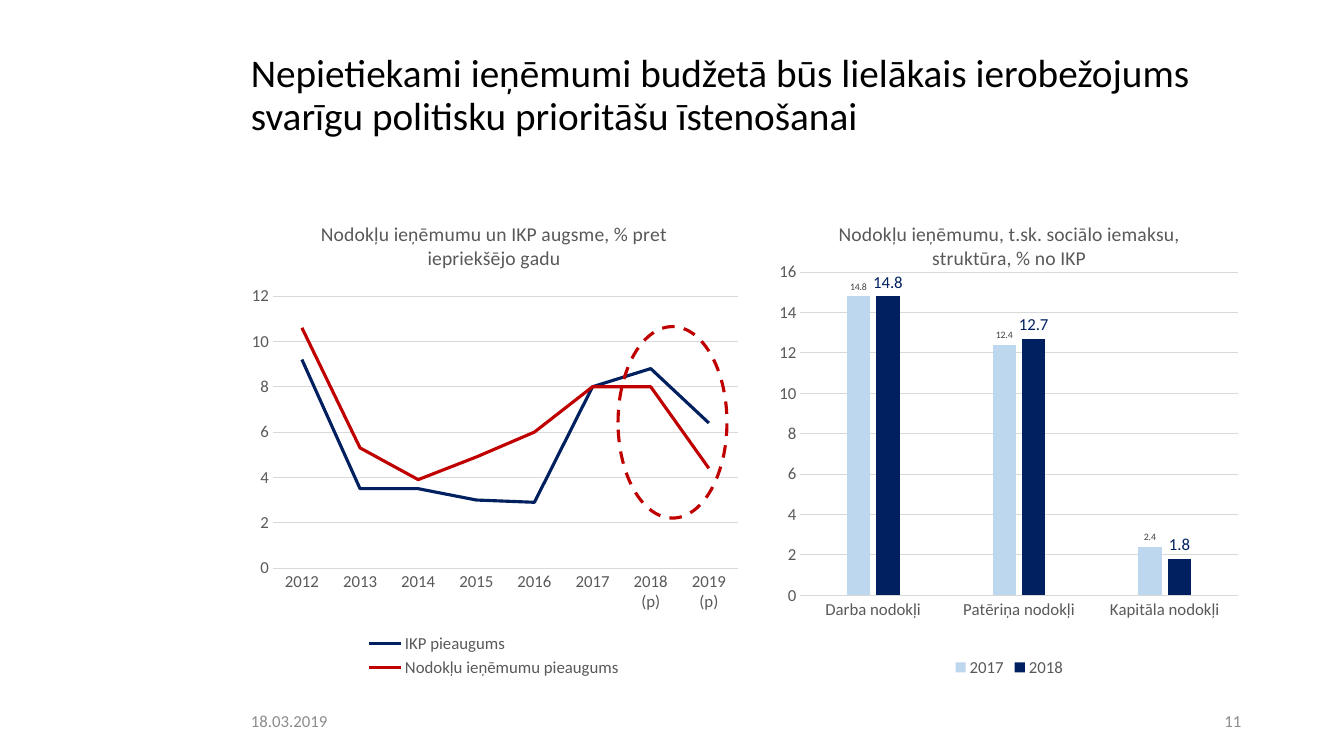
import pptx
import pptx.chart.data
import pptx.dml.color
import pptx.enum.chart
import pptx.enum.dml
import pptx.enum.shapes
import pptx.enum.text
import pptx.oxml
import pptx.util
from pptx.util import Inches

HEX = {"black": "000000", "grey": "595959", "pale": "8C8C8C", "grid": "D9D9D9",
       "sky": "BDD7EE", "navy": "002060", "red": "C00000", "dark": "404040"}
RGB = {name: pptx.dml.color.RGBColor.from_string(code) for name, code in HEX.items()}
KIND = pptx.enum.chart.XL_CHART_TYPE
ALIGN = pptx.enum.text.PP_ALIGN

deck = pptx.Presentation()
deck.slide_width, deck.slide_height = Inches(13.33), Inches(7.5)
slide = deck.slides.add_slide(deck.slide_layouts[6])


def style(font, size, color):
    font.name = "Calibri"
    font.size = pptx.util.Pt(size)
    font.bold = False
    font.color.rgb = RGB[color]


def add_plot(kind, left, width, cats, rows, title, top, area):
    data = pptx.chart.data.CategoryChartData()
    data.categories = cats
    for name, vals in rows:
        data.add_series(name, vals)
    chart = slide.shapes.add_chart(kind, Inches(left), Inches(2), Inches(width),
                                   Inches(4.76), data).chart
    style(chart.font, 12, "black")

    # Title and legend
    chart.has_title = True
    para = chart.chart_title.text_frame.paragraphs[0]
    para.text = title
    style(para.runs[0].font, 14, "grey")
    chart.chart_title.include_in_layout = False
    chart.has_legend = True
    chart.legend.position = pptx.enum.chart.XL_LEGEND_POSITION.BOTTOM
    chart.legend.include_in_layout = False
    style(chart.legend.font, 12, "grey")

    # Axes
    for axis in (chart.category_axis, chart.value_axis):
        axis.major_tick_mark = pptx.enum.chart.XL_TICK_MARK.NONE
        style(axis.tick_labels.font, 12, "grey")
    grid = chart.value_axis.major_gridlines.format.line
    for line in (chart.category_axis.format.line, grid):
        line.color.rgb = RGB["grid"]
        line.width = pptx.util.Pt(0.75)
    axis = chart.value_axis
    axis.format.line.fill.background()
    axis.minimum_scale, axis.maximum_scale, axis.major_unit = 0, top, 2
    axis.tick_labels.number_format = "0"
    axis.tick_labels.number_format_is_linked = False

    # Plot area as shares of the chart
    marks = "".join(f'<c:{tag} val="{val}"/>' for tag, val in zip("xywh", area))
    box = pptx.oxml.parse_xml(
        '<c:layout xmlns:c="http://schemas.openxmlformats.org/drawingml/2006/chart">'
        '<c:manualLayout><c:layoutTarget val="inner"/><c:xMode val="edge"/>'
        f'<c:yMode val="edge"/>{marks}</c:manualLayout></c:layout>')
    plot = chart._chartSpace.chart.plotArea
    for old in plot.xpath("c:layout"):
        plot.remove(old)
    plot.insert(0, box)
    chart.plots[0].vary_by_categories = False
    return chart


# Heading, date and page number
texts = [
    ("Nepietiekami ieņēmumi budžetā būs lielākais ierobežojums svarīgu politisku "
     "prioritāšu īstenošanai", 2.39, 0.4, 10.02, 1.11, 28, "black", ALIGN.LEFT),
    ("18.03.2019", 2.39, 6.95, 1.64, 0.4, 12, "pale", ALIGN.LEFT),
    ("11", 11.62, 6.95, 0.79, 0.4, 12, "pale", ALIGN.RIGHT),
]
for text, left, top, width, height, size, color, align in texts:
    frame = slide.shapes.add_textbox(Inches(left), Inches(top), Inches(width),
                                     Inches(height)).text_frame
    frame.word_wrap = True
    frame.vertical_anchor = pptx.enum.text.MSO_ANCHOR.MIDDLE
    frame.text = text
    para = frame.paragraphs[0]
    para.alignment = align
    para.line_spacing = 0.9 if size == 28 else 1.0
    style(para.runs[0].font, size, color)

# Tax structure columns
bars = add_plot(
    KIND.COLUMN_CLUSTERED, 7.6, 4.82,
    ["Darba nodokļi", "Patēriņa nodokļi", "Kapitāla nodokļi"],
    [("2017", (14.8, 12.4, 2.4)), ("2018", (14.8, 12.7, 1.8))],
    "Nodokļu ieņēmumu, t.sk. sociālo iemaksu, struktūra, % no IKP",
    16, (0.07, 0.147, 0.9, 0.674))
bars.plots[0].gap_width, bars.plots[0].overlap = 400, -27
looks = [("sky", 7, "dark"), ("navy", 12, "navy")]
for row, (fill, size, ink) in zip(bars.plots[0].series, looks):
    row.format.fill.solid()
    row.format.fill.fore_color.rgb = RGB[fill]
    tags = row.data_labels
    tags.show_value = True
    tags.number_format, tags.number_format_is_linked = "0.0", False
    tags.position = pptx.enum.chart.XL_LABEL_POSITION.OUTSIDE_END
    style(tags.font, size, ink)

# Growth lines
years = [str(year) for year in range(2012, 2018)] + ["2018 (p)", "2019 (p)"]
lines = add_plot(
    KIND.LINE, 2.39, 5.02, years,
    [("IKP pieaugums", (9.2, 3.5, 3.5, 3, 2.9, 8, 8.8, 6.4)),
     ("Nodokļu ieņēmumu pieaugums", (10.6, 5.3, 3.9, 4.9, 6, 8, 8, 4.4))],
    "Nodokļu ieņēmumu un IKP augsme, % pret iepriekšējo gadu",
    12, (0.063, 0.197, 0.919, 0.567))
for row, color in zip(lines.plots[0].series, ("navy", "red")):
    row.smooth = False
    row.marker.style = pptx.enum.chart.XL_MARKER_STYLE.NONE
    row.format.line.color.rgb = RGB[color]
    row.format.line.width = pptx.util.Pt(2.25)

# Dashed ring around the forecast years
ring = slide.shapes.add_shape(pptx.enum.shapes.MSO_SHAPE.OVAL, Inches(6.13),
                              Inches(3.24), Inches(1.08), Inches(1.9))
ring.shadow.inherit = False
ring.fill.background()
ring.line.color.rgb = RGB["red"]
ring.line.width = pptx.util.Pt(2.25)
ring.line.dash_style = pptx.enum.dml.MSO_LINE.DASH

deck.save("out.pptx")
